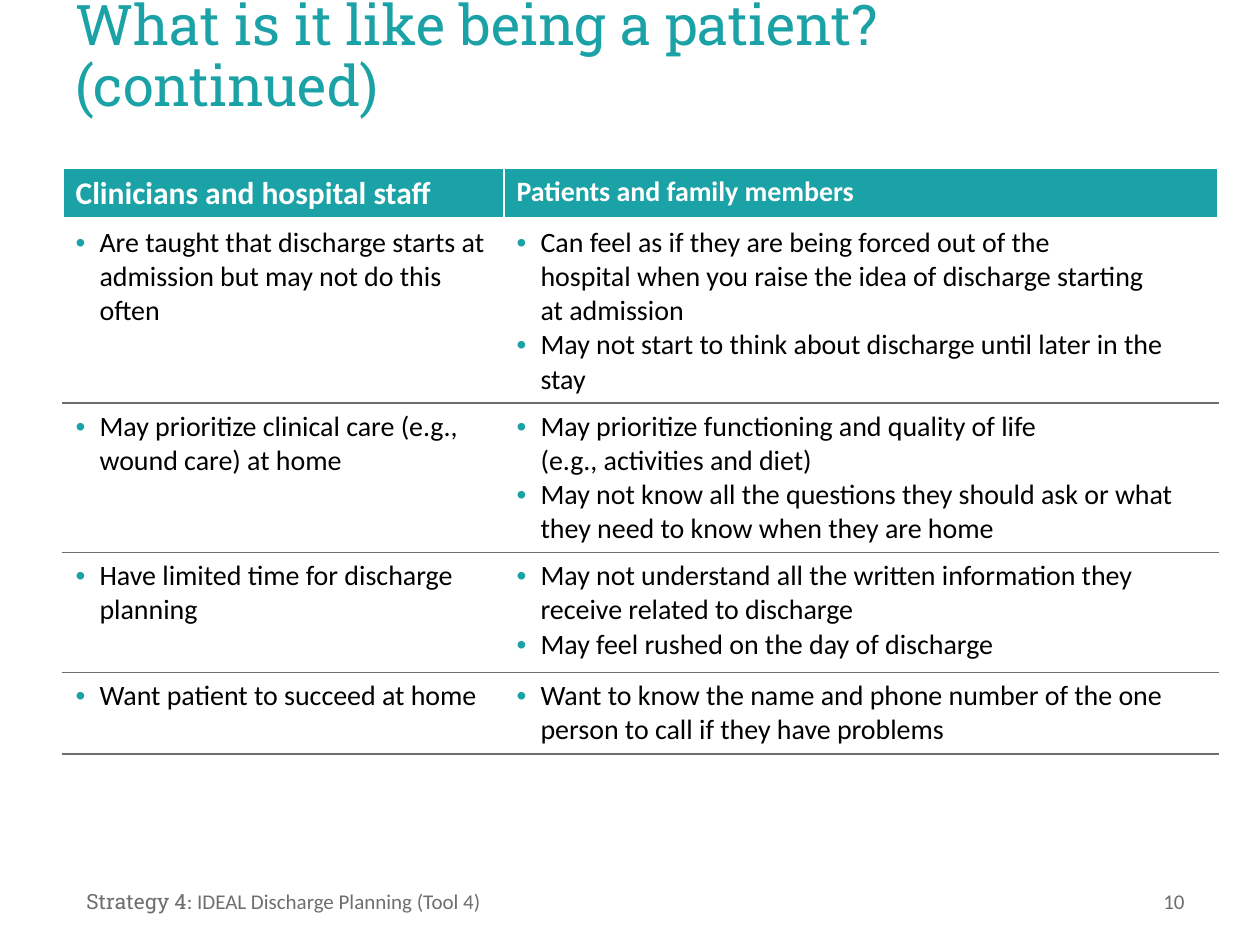
from copy import deepcopy
from lxml import etree
from pptx import Presentation
from pptx import util as u
from pptx.dml.color import RGBColor
from pptx.enum import text as t
from pptx.oxml.ns import qn

HUES = {"teal": "1AA2A6", "gray": "6E6E6E", "white": "FFFFFF", "black": "000000"}
BODY, SLAB = "Calibri", "Roboto Slab"
HEADS = [("Clinicians and hospital staff", 18), ("Patients and family members", 16)]
ROWS = [
    (["Are taught that discharge starts at admission but may not do this often"],
     ["Can feel as if they are being forced out of the\nhospital when you raise "
      "the idea of discharge starting\nat admission",
      "May not start to think about discharge until later in the stay"]),
    (["May prioritize clinical care (e.g., wound care) at home"],
     ["May prioritize functioning and quality of life\n(e.g., activities and diet)",
      "May not know all the questions they should ask or what they need to know "
      "when they are home"]),
    (["Have limited time for discharge planning"],
     ["May not understand all the written information they receive related to discharge",
      "May feel rushed on the day of discharge"]),
    (["Want patient to succeed at home"],
     ["Want to know the name and phone number of the one person to call if they "
      "have problems"]),
]


def px(n):
    """Turn px into EMU at 126 px to the inch."""
    return u.Emu(round(n * 914400 / 126))


def rgb(hue):
    """Look up a named colour."""
    return RGBColor.from_string(HUES[hue])


def write(para, words, size=16, face=BODY, hue="black", bold=False):
    """Add formatted words, with line breaks, to a paragraph."""
    for i, line in enumerate(words.split("\n")):
        if i:
            para.add_line_break()
        run = para.add_run()
        run.text = line
        font = run.font
        font.size, font.name, font.bold = u.Pt(size), face, bold
        font.color.rgb = rgb(hue)
    for brk in para._p.findall(qn("a:br")):
        if brk.find(qn("a:rPr")) is None:
            brk.append(deepcopy(run._r.find(qn("a:rPr"))))


def bullet(para):
    """Give a paragraph a hanging teal bullet."""
    props = para._p.get_or_add_pPr()
    props.set("marL", str(px(24)))
    props.set("indent", str(-px(24)))
    tint = etree.SubElement(props, qn("a:buClr"))
    etree.SubElement(tint, qn("a:srgbClr"), val=HUES["teal"])
    etree.SubElement(props, qn("a:buFont"), typeface="Arial")
    etree.SubElement(props, qn("a:buChar"), char="•")


def edge(cell, side, hue, width):
    """Draw one side of a cell's border."""
    line = etree.SubElement(cell._tc.get_or_add_tcPr(), qn("a:ln" + side),
                            w=str(u.Pt(width)))
    fill = etree.SubElement(line, qn("a:solidFill"))
    etree.SubElement(fill, qn("a:srgbClr"), val=HUES[hue])


def frame(cell, top, base, width=1):
    """Draw all four sides of a cell's border."""
    for side, hue, wide in (("L", "white", 1), ("R", "white", 1),
                            ("T", top, 1), ("B", base, width)):
        edge(cell, side, hue, wide)


def title(slide, x, y, w, h):
    """Place the slide title."""
    shape = slide.shapes.title
    shape.left, shape.top, shape.width, shape.height = map(px, (x, y, w, h))
    box = shape.text_frame
    box.word_wrap, box.auto_size = True, t.MSO_AUTO_SIZE.NONE
    box.vertical_anchor = t.MSO_ANCHOR.MIDDLE
    para = box.paragraphs[0]
    para.alignment, para.line_spacing = t.PP_ALIGN.LEFT, 0.9
    write(para, "What is it like being a patient? (continued)", 32, SLAB, "teal")


def grid(slide, x, y, cols, highs):
    """Place the table that compares staff with patients."""
    table = slide.shapes.add_table(len(highs), len(cols), px(x), px(y),
                                   px(sum(cols)), px(sum(highs))).table
    table.horz_banding = table.first_row = False
    for col, wide in zip(table.columns, cols):
        col.width = px(wide)
    for row, high in zip(table.rows, highs):
        row.height = px(high)
    for c, (words, size) in enumerate(HEADS):
        cell = table.cell(0, c)
        frame(cell, "white", "white", 3)
        cell.fill.solid()
        cell.fill.fore_color.rgb = rgb("teal")
        write(cell.text_frame.paragraphs[0], words, size, hue="white", bold=True)
    for r, pair in enumerate(ROWS, 1):
        for c, items in enumerate(pair):
            cell = table.cell(r, c)
            frame(cell, "white" if r == 1 else "gray", "gray")
            cell.fill.background()
            for i, words in enumerate(items):
                box = cell.text_frame
                para = box.add_paragraph() if i else box.paragraphs[0]
                bullet(para)
                write(para, words)


def label(slide, x, y, w, h, parts, align=t.PP_ALIGN.LEFT):
    """Place one small gray line of text made of (words, face) parts."""
    box = slide.shapes.add_textbox(*map(px, (x, y, w, h))).text_frame
    box.word_wrap, box.vertical_anchor = True, t.MSO_ANCHOR.MIDDLE
    para = box.paragraphs[0]
    para.alignment = align
    for words, face in parts:
        write(para, words, 12, face, "gray")


def footer(slide, x, y, w, h):
    """Place the tool name at left and the page number at right."""
    label(slide, x, y, 567, h,
          [("Strategy 4", SLAB), (": IDEAL Discharge Planning (Tool 4)", BODY)])
    label(slide, x + w - 294, y, 294, h, [("10", BODY)], t.PP_ALIGN.RIGHT)


def main():
    """Build and save the slide."""
    deck = Presentation()
    deck.slide_width, deck.slide_height = px(1260), px(945)
    slide = deck.slides.add_slide(deck.slide_layouts[5])
    title(slide, 63, 0, 1134, 116)
    grid(slide, 63, 168, [441, 714], [51, 184, 149, 120, 81])
    footer(slide, 74, 876, 1123, 50)
    deck.save("out.pptx")


if __name__ == "__main__":
    main()
